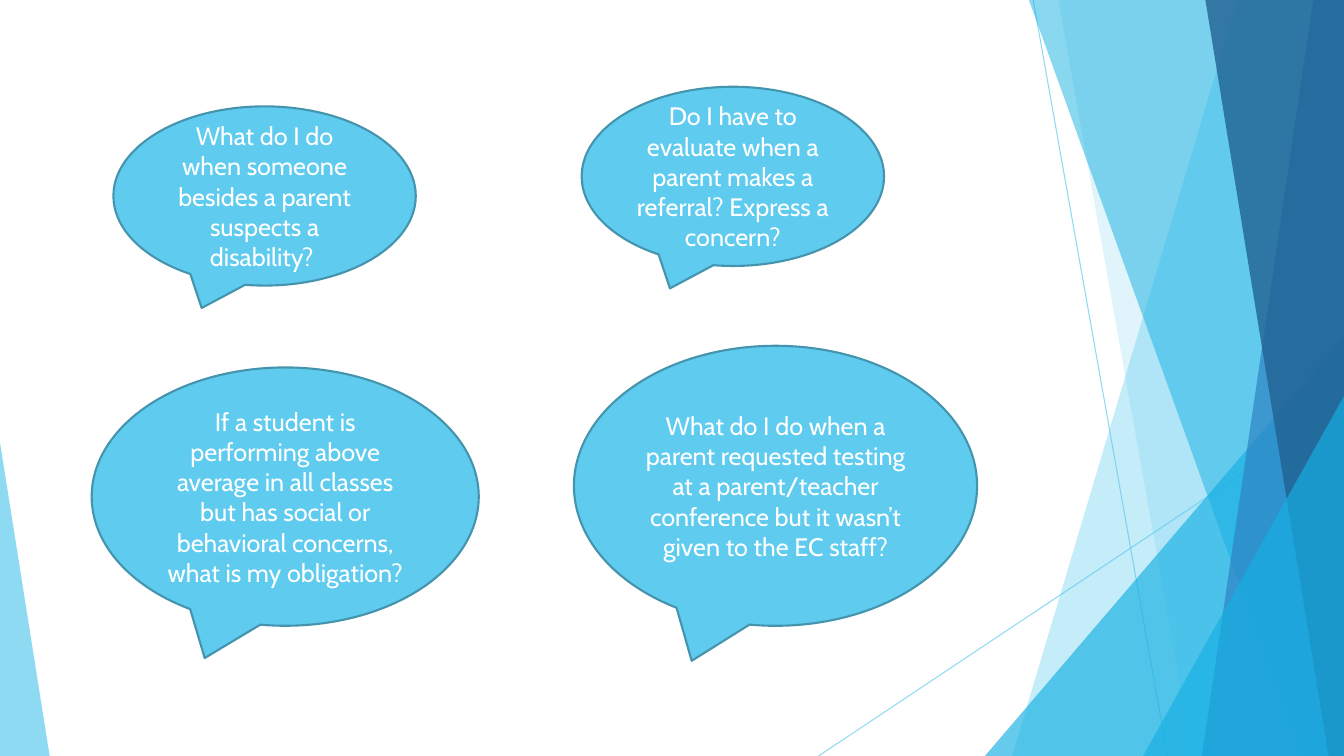
from pptx import Presentation
from pptx.dml.color import RGBColor
from pptx.enum.shapes import MSO_CONNECTOR as Connector, MSO_SHAPE as Shape
from pptx.enum.text import MSO_ANCHOR as Anchor, PP_ALIGN as Align
from pptx.oxml.ns import qn
from pptx.util import Pt
from lxml.etree import SubElement

SKY = RGBColor(0x5F, 0xCB, 0xEF)
CYAN = RGBColor(0x16, 0xB0, 0xE3)
BLUE = RGBColor(0x2E, 0x83, 0xC3)
NAVY = RGBColor(0x22, 0x62, 0x92)
OUTLINE = RGBColor(0x45, 0x94, 0xAE)
WHITE = RGBColor(0xFF, 0xFF, 0xFF)
FONT = "Cabin"
WIDTH, HEIGHT = 960, 540

# Thin lines: start x, start y, end x, end y
RAYS = [(738, 0, 834, 540), (960, 290, 584.7, 540)]

# Facets, back to front: kind, geometry, colour, opacity in percent
# A band has its left edge's top x and bottom x; it runs to the page's right side.
# A triangle has left, top, width and apex position; it stands on the page's foot.
FACETS = [
    ("band", (884, 723), SKY, 36),
    ("band", (756, 852), SKY, 20),
    ("triangle", (703.5, 240, 256.5, 1), CYAN, 66),
    ("band", (735, 929.5), CYAN, 50),
    ("band", (938, 858.5), BLUE, 70),
    ("band", (861, 949), NAVY, 80),
    ("triangle", (816.5, 283, 143.5, 1), CYAN, 66),
    ("triangle", (0, 316, 35.5, 0), SKY, 70),
]

# Speech bubbles: left, top, width, height, question
BUBBLES = [
    (81, 76, 216, 128,
     "What do I do when someone besides a parent suspects a disability? "),
    (65.5, 262.5, 276.5, 184.5,
     "If a student is performing above average in all classes but has social or "
     "behavioral concerns, what is my obligation?"),
    (415.5, 62, 216, 128,
     "Do I have to evaluate when a parent makes a referral? Express a concern?"),
    (410, 247, 288, 200,
     "What do I do when a parent requested testing at a parent/teacher conference "
     "but it wasn’t given to the EC staff?"),
]
TAIL = (-0.208, 0.625)


def set_opacity(item, percent):
    for colour in item._element.iter(qn("a:srgbClr")):
        SubElement(colour, qn("a:alpha")).set("val", str(percent * 1000))


def add_ray(page, *ends):
    ray = page.shapes.add_connector(Connector.STRAIGHT, *map(Pt, ends))
    ray.line.color.rgb = SKY
    ray.line.width = Pt(0.75)
    SubElement(ray._element.spPr, qn("a:effectLst"))
    set_opacity(ray, 70)


def add_facet(page, kind, geometry, colour, opacity):
    if kind == "band":
        top_x, bottom_x = geometry
        builder = page.shapes.build_freeform(Pt(top_x), 0)
        corners = [(WIDTH, 0), (WIDTH, HEIGHT), (bottom_x, HEIGHT)]
        builder.add_line_segments([(Pt(x), Pt(y)) for x, y in corners], close=True)
        facet = builder.convert_to_shape()
    else:
        left, top, width, apex = geometry
        facet = page.shapes.add_shape(
            Shape.ISOSCELES_TRIANGLE, Pt(left), Pt(top), Pt(width), Pt(HEIGHT - top))
        facet.adjustments[0] = apex
    facet.shadow.inherit = False
    facet.fill.solid()
    facet.fill.fore_color.rgb = colour
    facet.line.fill.background()
    set_opacity(facet, opacity)


def add_bubble(page, *parts):
    *box, question = parts
    bubble = page.shapes.add_shape(Shape.OVAL_CALLOUT, *map(Pt, box))
    bubble.adjustments[0], bubble.adjustments[1] = TAIL
    bubble.shadow.inherit = False
    bubble.fill.solid()
    bubble.fill.fore_color.rgb = SKY
    bubble.line.color.rgb = OUTLINE
    bubble.line.width = Pt(1.5)
    frame = bubble.text_frame
    frame.word_wrap = True
    frame.vertical_anchor = Anchor.MIDDLE
    para = frame.paragraphs[0]
    para.alignment = Align.CENTER
    span = para.add_run()
    span.text = question
    span.font.name = FONT
    span.font.size = Pt(18)
    span.font.color.rgb = WHITE


def main():
    deck = Presentation()
    deck.slide_width, deck.slide_height = Pt(WIDTH), Pt(HEIGHT)
    page = deck.slides.add_slide(deck.slide_layouts[6])  # blank layout
    # Backdrop
    for ray in RAYS:
        add_ray(page, *ray)
    for facet in FACETS:
        add_facet(page, *facet)
    # Questions
    for bubble in BUBBLES:
        add_bubble(page, *bubble)
    deck.save("out.pptx")


if __name__ == "__main__":
    main()
